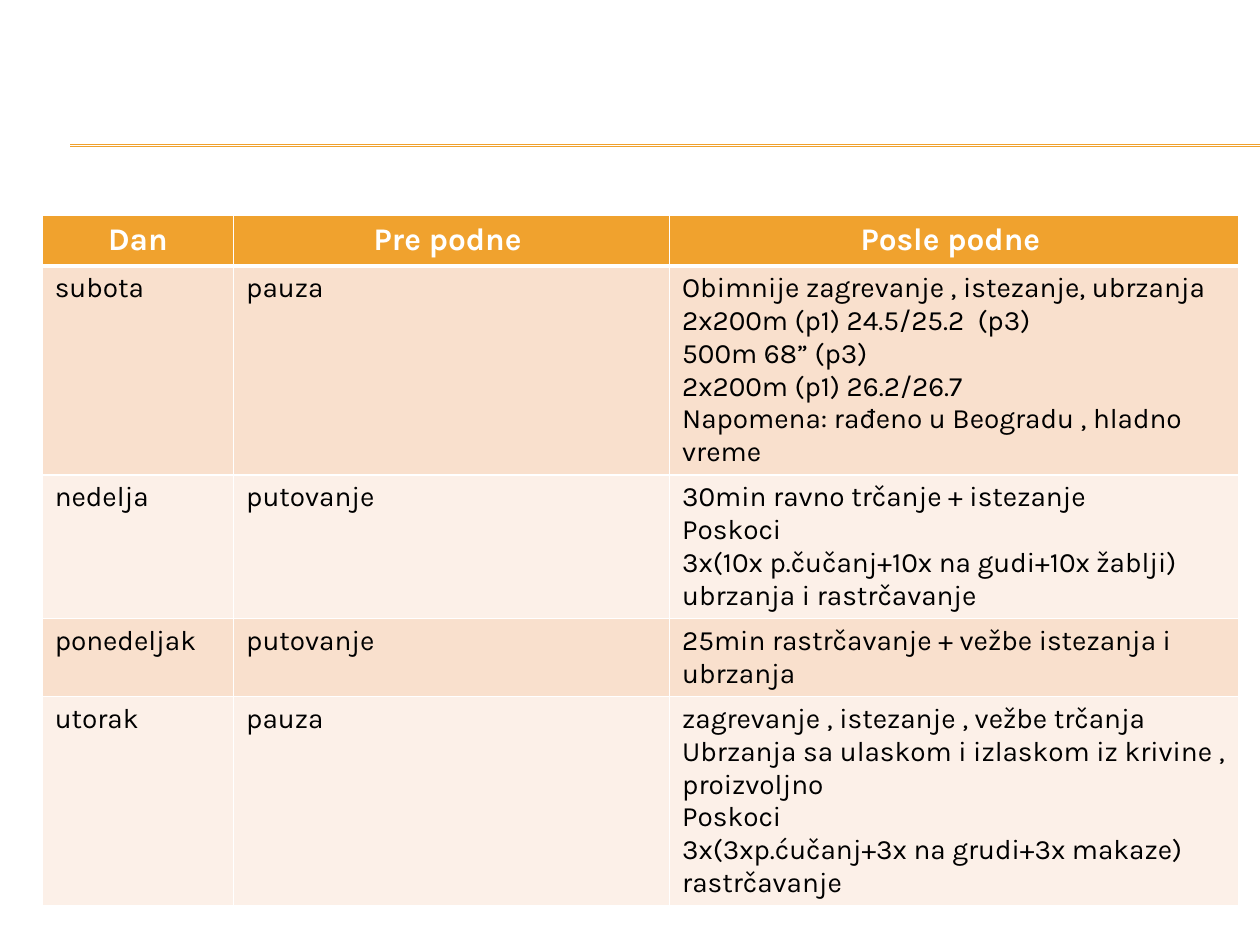
from lxml.etree import SubElement
from pptx import Presentation
from pptx.dml.color import RGBColor
from pptx.enum.shapes import MSO_CONNECTOR
from pptx.enum.text import PP_ALIGN
from pptx.oxml.ns import qn
from pptx.util import Cm, Pt

GOLD, PEACH, CREAM = "F0A22E", "F9E0CD", "FCF0E8"
WHITE, BLACK = "FFFFFF", "000000"
HEAD = {"name": "Karla", "size": Pt(18), "bold": True}
BODY = {"name": "Karla", "size": Pt(16), "bold": False}
WIDTHS = [3.86, 8.79, 11.48]
ROWS = [
    ["Dan", "Pre podne ", "Posle podne "],
    ["subota", "pauza",
     "Obimnije zagrevanje , istezanje, ubrzanja\n"
     "2x200m (p1) 24.5/25.2  (p3)\n"
     "500m 68” (p3)\n"
     "2x200m (p1) 26.2/26.7\n"
     "Napomena: rađeno u Beogradu , hladno vreme"],
    ["nedelja", "putovanje",
     "30min ravno trčanje + istezanje\n"
     "Poskoci\n"
     "3x(10x p.čučanj+10x na gudi+10x žablji)\n"
     "ubrzanja i rastrčavanje"],
    ["ponedeljak", "putovanje",
     "25min rastrčavanje + vežbe istezanja i ubrzanja"],
    ["utorak", "pauza",
     "zagrevanje , istezanje , vežbe trčanja\n"
     "Ubrzanja sa ulaskom i izlaskom iz krivine , proizvoljno\n"
     "Poskoci\n"
     "3x(3xp.ćučanj+3x na grudi+3x makaze)\n"
     "rastrčavanje"],
]


def paint(target, tone):
    """Give a fill a solid colour."""
    target.solid()
    target.fore_color.rgb = RGBColor.from_string(tone)


def add_rule(slide, top):
    """Draw a thin gold line that runs to the right edge."""
    rule = slide.shapes.add_connector(
        MSO_CONNECTOR.STRAIGHT, Cm(1.42), Cm(top), Cm(25.4), Cm(top))
    rule.line.width = Pt(0.75)
    paint(rule.line.fill, GOLD)
    SubElement(rule._element.spPr, qn("a:effectLst"))


def add_edge(cell, side, width):
    """Draw one white border of a cell."""
    props = cell._tc.get_or_add_tcPr()
    edge = SubElement(props, qn(f"a:ln{side}"), w=str(Pt(width)))
    fill = SubElement(edge, qn("a:solidFill"))
    SubElement(fill, qn("a:srgbClr"), val=WHITE)


def fill_cell(cell, text, tone, ink, style, align, sides):
    """Write, format and frame one cell."""
    for side, width in sides.items():
        add_edge(cell, side, width)
    paint(cell.fill, tone)
    cell.text = text
    for para in cell.text_frame.paragraphs:
        para.alignment = align
        for run in para.runs:
            for key, value in style.items():
                setattr(run.font, key, value)
            paint(run.font.fill, ink)


def add_plan(slide):
    """Build the training table."""
    frame = slide.shapes.add_table(
        len(ROWS), len(WIDTHS), Cm(0.85), Cm(4.33),
        Cm(sum(WIDTHS)), Cm(1.03 * len(ROWS)))
    table = frame.table
    for col, width in zip(table.columns, WIDTHS):
        col.width = Cm(width)
    for i, row in enumerate(ROWS):
        if i == 0:
            look = GOLD, WHITE, HEAD, PP_ALIGN.CENTER
        else:
            look = PEACH if i % 2 else CREAM, BLACK, BODY, PP_ALIGN.LEFT
        sides = {"L": 1, "R": 1, "T": 3 if i == 1 else 1,
                 "B": 3 if i == 0 else 1}
        for j, text in enumerate(row):
            fill_cell(table.cell(i, j), text, *look, sides)


def main():
    """Build and save the slide."""
    deck = Presentation()
    deck.slide_width, deck.slide_height = Cm(25.4), Cm(19.05)
    slide = deck.slides.add_slide(deck.slide_layouts[6])
    paint(slide.background.fill, WHITE)
    for top in (2.92, 2.95):
        add_rule(slide, top)
    add_plan(slide)
    deck.save("out.pptx")


if __name__ == "__main__":
    main()
